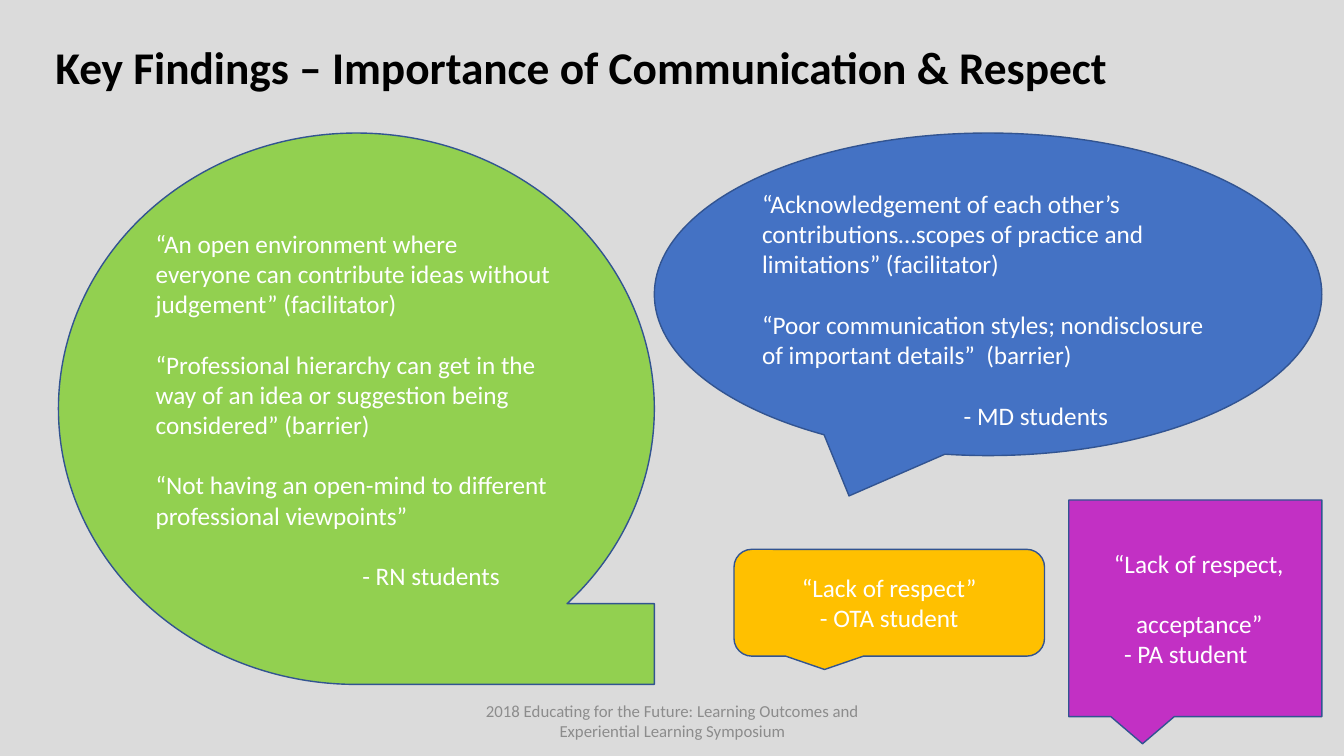
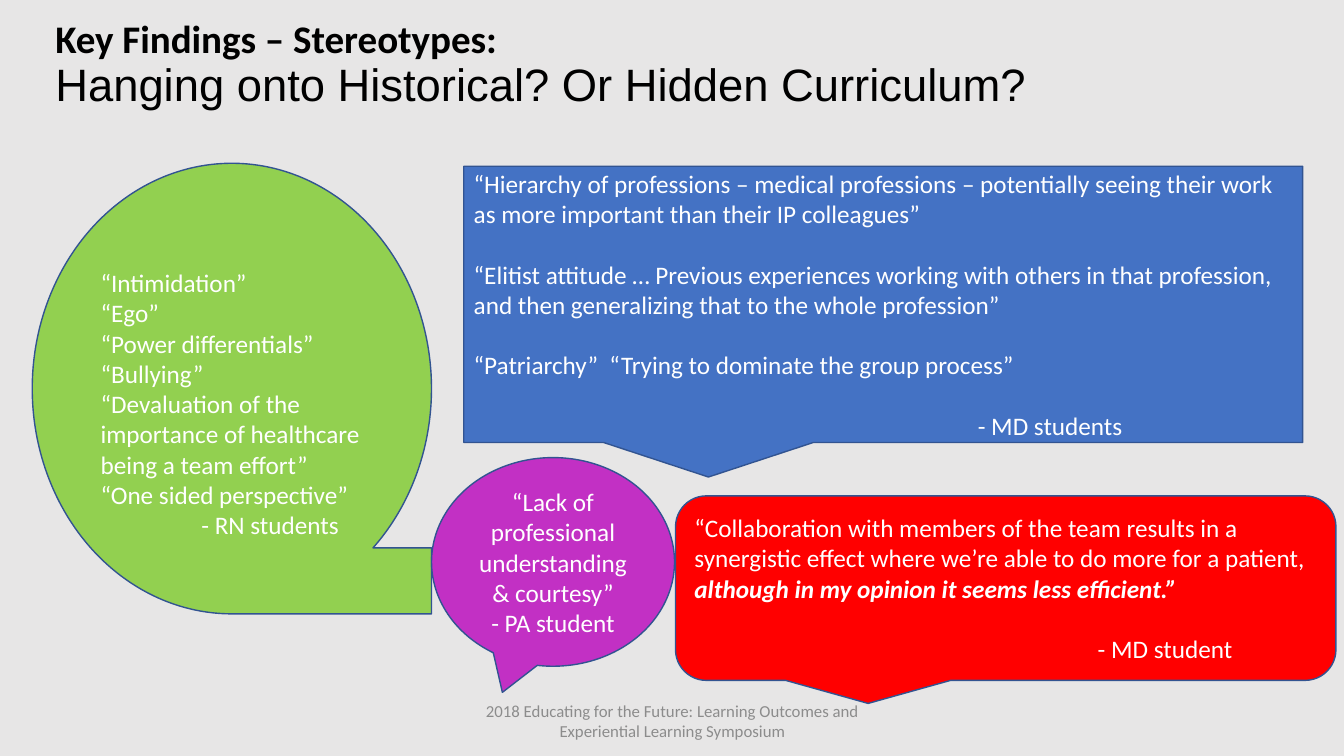
from dataclasses import dataclass

import pptx
import pptx.dml.color
import pptx.enum.shapes
import pptx.enum.text
import pptx.util

Inches = pptx.util.Inches
Pt = pptx.util.Pt
Shape = pptx.enum.shapes.MSO_SHAPE
Align = pptx.enum.text.PP_ALIGN
Anchor = pptx.enum.text.MSO_ANCHOR


@dataclass(frozen=True)
class Theme:
    font: str = "Calibri"
    subtitle_font: str = "Arial"
    title: str = "000000"
    footer: str = "8C8C8C"
    quote: str = "FFFFFF"
    outline: str = "325491"
    blue: str = "4472C4"
    green: str = "92D050"
    purple: str = "C230C4"
    amber: str = "FFC000"
    red: str = "FF0000"
    title_size: float = 32.4
    small_title_size: float = 27.9
    quote_size: float = 18
    footer_size: float = 12
    outline_width: float = 1
    quote_gap: float = 21.6


THEME = Theme()
FOOTER = ("2018 Educating for the Future: Learning Outcomes and "
          "Experiential Learning Symposium")


def rgb(color):
    return pptx.dml.color.RGBColor.from_string(color)


def add_text(tf, text, size=THEME.quote_size, color=THEME.quote, font=THEME.font,
             bold=False, italic=False, align=Align.LEFT, gap=0, indent=0, spacing=None):
    """Append a paragraph, filling the frame's first one if it is still empty."""
    p = tf.paragraphs[0]
    if p.runs:
        p = tf.add_paragraph()
    p.alignment = align
    p.space_before = Pt(gap)
    p.line_spacing = spacing
    if indent:
        p._p.get_or_add_pPr().set("marL", str(Inches(indent)))
    r = p.add_run()
    r.text = text
    r.font.name = font
    r.font.size = Pt(size)
    r.font.bold = bold
    r.font.italic = italic
    r.font.color.rgb = rgb(color)


def add_box(slide, left, top, width, height):
    sp = slide.shapes.add_textbox(*map(Inches, (left, top, width, height)))
    tf = sp.text_frame
    tf.word_wrap = True
    tf.vertical_anchor = Anchor.MIDDLE
    return tf


def add_title(slide, text, top, height, size=THEME.title_size, subtitle=None):
    tf = add_box(slide, 0.45, top, 11.21, height)
    add_text(tf, text, size=size, color=THEME.title, bold=True, spacing=0.9)
    if subtitle:
        add_text(tf, subtitle, size=THEME.title_size, color=THEME.title,
                 font=THEME.subtitle_font, spacing=0.9)


def add_footer(slide):
    tf = add_box(slide, 4.42, 6.95, 4.5, 0.4)
    add_text(tf, FOOTER, size=THEME.footer_size, color=THEME.footer, align=Align.CENTER)


def add_bubble(slide, kind, bounds, fill, quotes, inset=None, **common):
    """Draw a speech bubble; quotes are (text, format) pairs.

    Text is centred vertically unless a top inset is given.
    """
    sp = slide.shapes.add_shape(kind, *map(Inches, bounds))
    sp.shadow.inherit = False
    sp.fill.solid()
    sp.fill.fore_color.rgb = rgb(fill)
    sp.line.color.rgb = rgb(THEME.outline)
    sp.line.width = Pt(THEME.outline_width)
    tf = sp.text_frame
    tf.word_wrap = True
    tf.vertical_anchor = Anchor.MIDDLE
    if inset is not None:
        tf.vertical_anchor = Anchor.TOP
        tf.margin_top = Inches(inset)
    for text, style in quotes:
        add_text(tf, text, **common, **style)


def add_slide(prs, background):
    slide = prs.slides.add_slide(prs.slide_layouts[6])
    slide.background.fill.solid()
    slide.background.fill.fore_color.rgb = rgb(background)
    add_footer(slide)
    return slide


def spaced(indent=0):
    return {"gap": THEME.quote_gap, "indent": indent}


def build_communication(prs):
    slide = add_slide(prs, "DBDBDB")
    add_title(slide, "Key Findings – Importance of Communication & Respect", 0.22, 0.94)
    add_bubble(slide, Shape.OVAL_CALLOUT, (6.49, 1.32, 6.62, 3.2), THEME.blue, [
        ("“Acknowledgement of each other’s contributions…scopes of practice and "
         "limitations” (facilitator)", {}),
        ("“Poor communication styles; nondisclosure of important details”  (barrier)",
         spaced()),
        ("- MD students", spaced(2)),
    ], inset=0.08)
    add_bubble(slide, Shape.FLOWCHART_SEQUENTIAL_ACCESS_STORAGE,
               (0.58, 1.32, 5.91, 5.47), THEME.green, [
        ("“An open environment where everyone can contribute ideas without "
         "judgement” (facilitator)", {}),
        ("“Professional hierarchy can get in the way of an idea or suggestion being "
         "considered” (barrier)", spaced()),
        ("“Not having an open-mind to different professional viewpoints”", spaced()),
        ("- RN students", spaced(2.05)),
    ], inset=0.14)
    add_bubble(slide, Shape.RECTANGULAR_CALLOUT, (10.6, 4.96, 2.51, 2.15), THEME.purple, [
        ("“Lack of respect,", {"indent": 0.35}),
        ("acceptance”", spaced(0.57)),
        ("- PA student", {"indent": 0.45}),
    ])
    add_bubble(slide, Shape.ROUNDED_RECTANGULAR_CALLOUT, (7.28, 5.45, 3.08, 1.06),
               THEME.amber, [("“Lack of respect”", {}), ("- OTA student", {})],
               align=Align.CENTER)


def build_stereotypes(prs):
    slide = add_slide(prs, "E7E6E6")
    add_title(slide, "Key Findings – Stereotypes:", 0.13, 1.04, size=THEME.small_title_size,
              subtitle="Hanging onto Historical? Or Hidden Curriculum?")
    add_bubble(slide, Shape.RECTANGULAR_CALLOUT, (4.6, 1.65, 8.32, 2.74), THEME.blue, [
        ("“Hierarchy of professions – medical professions – potentially seeing their work "
         "as more important than their IP colleagues”", {}),
        ("“Elitist attitude … Previous experiences working with others in that profession, "
         "and then generalizing that to the whole profession”", spaced()),
        ("“Patriarchy”  “Trying to dominate the group process”", spaced()),
        ("- MD students", spaced(5)),
    ], inset=0.02)
    add_bubble(slide, Shape.ROUNDED_RECTANGULAR_CALLOUT, (6.7, 4.92, 6.55, 1.83), THEME.red, [
        ("“Collaboration with members of the team results in a synergistic effect where "
         "we’re able to do more for a patient,", {}),
        ("although in my opinion it seems less efficient.”", {"bold": True, "italic": True}),
        ("- MD student", spaced(4)),
    ])
    add_bubble(slide, Shape.FLOWCHART_SEQUENTIAL_ACCESS_STORAGE,
               (0.32, 1.62, 3.96, 4.47), THEME.green, [
        ("“Intimidation”", {}),
        ("“Ego”", {}),
        ("“Power differentials” “Bullying”", {}),
        ("“Devaluation of the importance of healthcare being a team effort”", {}),
        ("“One sided perspective”", {}),
        ("- RN students", {"indent": 1}),
    ], inset=0.38)
    add_bubble(slide, Shape.OVAL_CALLOUT, (4.28, 4.54, 2.41, 2.07), THEME.purple, [
        ("“Lack of professional understanding & courtesy”", {}),
        ("- PA student", {}),
    ], align=Align.CENTER)


def main():
    prs = pptx.Presentation()
    prs.slide_width = Inches(13.33)
    prs.slide_height = Inches(7.5)
    build_communication(prs)
    build_stereotypes(prs)
    prs.save("out.pptx")


if __name__ == "__main__":
    main()
